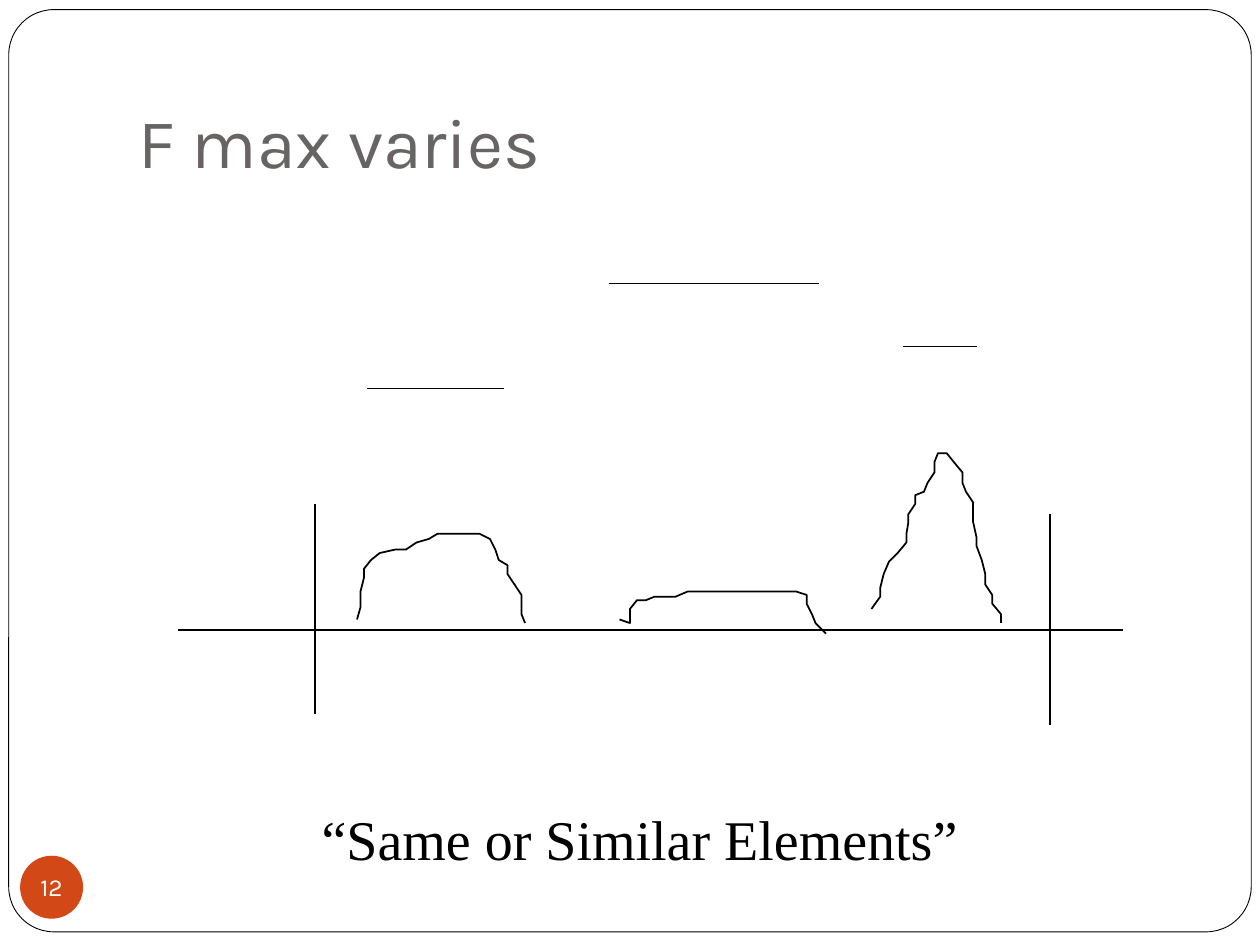
from pptx import Presentation
from pptx.dml.color import RGBColor
from pptx.enum import shapes as kinds, text as txt
from pptx.oxml import parse_xml
from pptx.oxml.ns import nsdecls
from pptx.util import Pt

BLACK = RGBColor(0x00, 0x00, 0x00)
WHITE = RGBColor(0xFF, 0xFF, 0xFF)
GRAY = RGBColor(0x69, 0x64, 0x64)
ORANGE = RGBColor(0xD3, 0x48, 0x17)


def write(frame, words, font, size, color, align):
    frame.text = words
    para = frame.paragraphs[0]
    para.alignment = align
    face = para.runs[0].font
    face.name, face.size, face.color.rgb = font, Pt(size), color


def ink(item, width):
    item.line.color.rgb = BLACK
    item.line.width = Pt(width)


deck = Presentation()
deck.slide_width, deck.slide_height = Pt(720), Pt(540)
slide = deck.slides.add_slide(deck.slide_layouts[5])
shapes = slide.shapes

# Rounded frame behind everything
frame = shapes.add_shape(kinds.MSO_SHAPE.ROUNDED_RECTANGLE,
                         Pt(5), Pt(5.5), Pt(710), Pt(527))
frame.adjustments[0] = 0.049
frame.shadow.inherit = False
frame.fill.solid()
frame.fill.fore_color.rgb = WHITE
ink(frame, 0.5)

title = shapes.title
title.left, title.top, title.width, title.height = Pt(72), Pt(21.6), Pt(612), Pt(90)
frame._element.addnext(title._element)
body = title.text_frame
body.vertical_anchor = txt.MSO_ANCHOR.BOTTOM
body.margin_bottom = Pt(7.2)
write(body, "F max varies", "Karla", 40, GRAY, txt.PP_ALIGN.LEFT)

# Axis, its two limits, and the level above each curve
lines = [
    (102, 360, 642, 360),
    (180, 288, 180, 408),
    (600, 294, 600, 414),
    (210, 222, 288, 222),
    (348, 162, 468, 162),
    (516, 198, 558, 198),
]
for x1, y1, x2, y2 in lines:
    line = shapes.add_connector(kinds.MSO_CONNECTOR.STRAIGHT,
                                Pt(x1), Pt(y1), Pt(x2), Pt(y2))
    ink(line, 1)
    line._element.spPr.append(parse_xml(f"<a:effectLst {nsdecls('a')}/>"))

# Hand-drawn curves, as points from left to right
curves = [
    [(204, 354), (206.3, 347), (206.3, 337.7), (208, 330.5), (208, 324.7),
     (211.7, 319.5), (217.4, 316), (226.5, 314), (232, 314), (237.6, 310.3),
     (244.8, 308.2), (250.3, 304.6), (274.3, 304.6), (279.5, 308.2),
     (283, 314), (285, 319.5), (290.3, 323), (290.3, 328.5), (294.3, 334),
     (298, 340), (298, 350.6), (299.7, 355.7)],
    [(354, 354), (360, 355.7), (360, 348.5), (363.6, 343.3), (369.3, 343.3),
     (374.4, 341.4), (385.7, 341.4), (393, 337.5), (455, 337.5),
     (460.7, 339.5), (460.7, 345), (464.3, 350.6), (466, 355.7), (471.6, 361.5)],
    [(498, 348), (502.6, 341.3), (502.6, 335.5), (504.7, 328.3), (508.3, 321),
     (513.4, 316), (517.5, 310.5), (517.5, 304.6), (519.3, 299.3),
     (519.3, 293.8), (522.7, 288), (522.7, 282.7), (528.4, 280.8), (530, 275.8),
     (533.7, 270), (533.7, 264.4), (535.5, 259), (541.2, 259), (545, 264.4),
     (550.2, 270), (550.2, 275.8), (552.2, 280.8), (555.8, 286.6),
     (555.8, 297.5), (557.5, 306.7), (557.5, 312.3), (561.3, 319.5),
     (563, 328.3), (563, 334), (566.7, 339.6), (566.7, 345), (572.2, 350.6),
     (572.2, 355.7)],
]
for first, *rest in curves:
    pen = shapes.build_freeform(*first, scale=Pt(1))
    pen.add_line_segments(rest, close=False)
    curve = pen.convert_to_shape()
    curve.shadow.inherit = False
    curve.fill.background()
    ink(curve, 1)

label = shapes.add_textbox(Pt(29.5), Pt(456), Pt(672.5), Pt(45.4))
label.text_frame.word_wrap = True
write(label.text_frame, "“Same or Similar Elements”", "Times New Roman", 32,
      BLACK, txt.PP_ALIGN.CENTER)

badge = shapes.add_shape(kinds.MSO_SHAPE.OVAL, Pt(11.5), Pt(489), Pt(36), Pt(36))
badge.shadow.inherit = False
badge.fill.solid()
badge.fill.fore_color.rgb = ORANGE
badge.line.fill.background()
body = badge.text_frame
body.word_wrap = False
body.vertical_anchor = txt.MSO_ANCHOR.MIDDLE
body.margin_left = body.margin_right = body.margin_top = body.margin_bottom = 0
write(body, "12", "Karla", 14, WHITE, txt.PP_ALIGN.CENTER)

deck.save("out.pptx")
